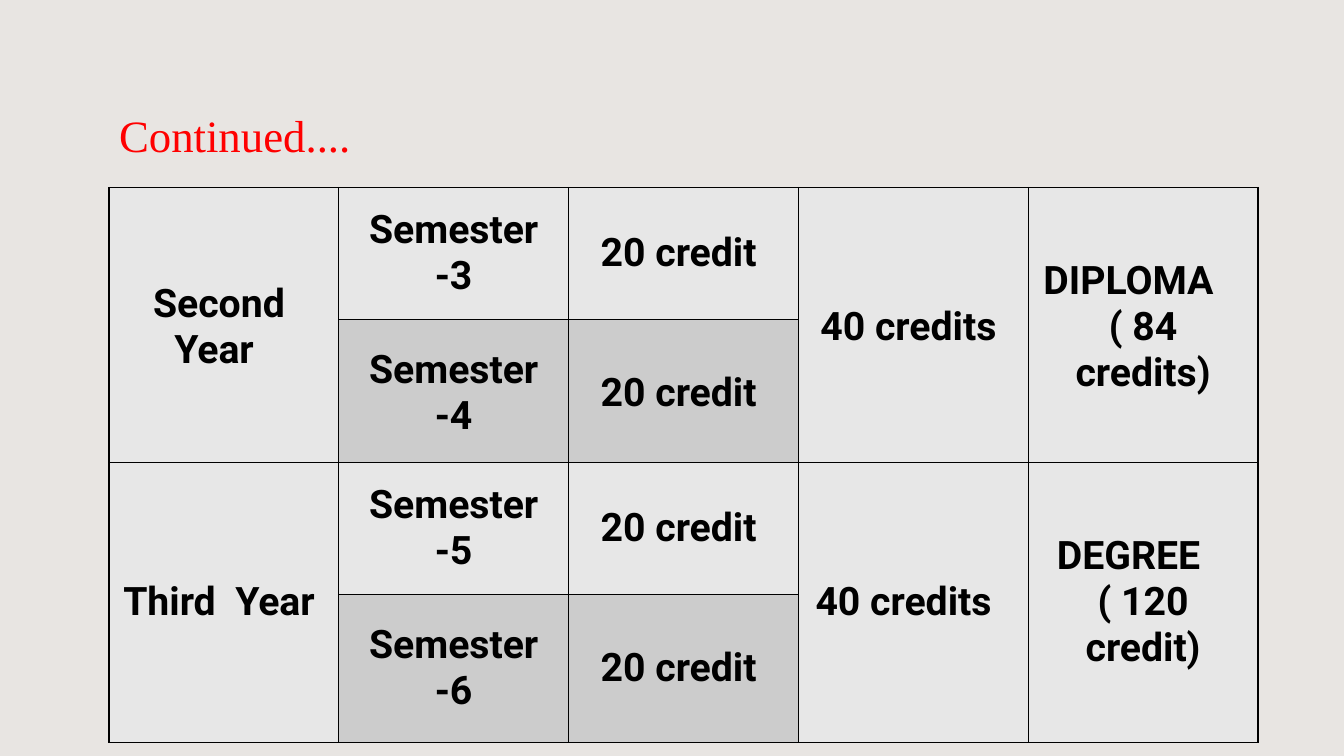
from dataclasses import dataclass

from lxml.etree import SubElement
from pptx import Presentation
from pptx.dml.color import RGBColor
from pptx.enum.text import MSO_ANCHOR, PP_ALIGN
from pptx.oxml.ns import qn
from pptx.util import Pt


@dataclass(frozen=True)
class Theme:
    back: str = "E8E5E2"
    light: str = "E7E7E7"
    dark: str = "CCCCCC"
    ink: str = "000000"
    red: str = "FF0000"
    head: int = 32
    body: int = 28
    serif: str = "Times New Roman"
    sans: str = "Roboto"


THEME = Theme()
HEAD = {"name": THEME.serif, "size": Pt(THEME.head), "bold": False}
BODY = {"name": THEME.sans, "size": Pt(THEME.body), "bold": True}

# Each year: name, semesters, credits per year, award
YEARS = [
    ("Second  Year  ", (3, 4), "40 credits ", "DIPLOMA   \n( 84 credits)"),
    ("Third  Year  ", (5, 6), "40 credits  ", "DEGREE   \n( 120 credit)"),
]
MERGED = (0, 3, 4)
COLS = 5


def paint(fill, color):
    fill.solid()
    fill.fore_color.rgb = RGBColor.from_string(color)


def style(frame, form, color, align):
    for para in frame.paragraphs:
        para.alignment = align
        for run in para.runs:
            for key, value in form.items():
                setattr(run.font, key, value)
            run.font.color.rgb = RGBColor.from_string(color)


def border(cell):
    props = cell._tc.get_or_add_tcPr()
    for spot, side in enumerate(("lnL", "lnR", "lnT", "lnB")):
        line = SubElement(props, qn(f"a:{side}"), w=str(Pt(1)))
        fill = SubElement(line, qn("a:solidFill"))
        SubElement(fill, qn("a:srgbClr"), val=THEME.ink)
        props.insert(spot, line)  # borders come before the fill


def title(slide, text, left, top, width, height):
    shape = slide.shapes.title
    box = {"left": left, "top": top, "width": width, "height": height}
    for key, value in box.items():
        setattr(shape, key, Pt(value))
    frame = shape.text_frame
    frame.text = text
    frame.vertical_anchor = MSO_ANCHOR.BOTTOM
    style(frame, HEAD, THEME.red, PP_ALIGN.LEFT)


def year(slide, data, left, top, width, height):
    name, terms, total, award = data
    rows = len(terms)
    table = slide.shapes.add_table(
        rows, COLS, Pt(left), Pt(top), Pt(width), Pt(height)).table
    table.first_row = table.horz_banding = False

    # Cells that span both semesters
    for col, text in zip(MERGED, (name, total, award)):
        table.cell(0, col).merge(table.cell(rows - 1, col))
        table.cell(0, col).text = text

    # One row per semester
    for row, term in enumerate(terms):
        table.cell(row, 1).text = f"Semester -{term}"
        table.cell(row, 2).text = "20 credit "
        for col in range(COLS):
            cell = table.cell(row, col)
            band = row % 2 and col not in MERGED
            paint(cell.fill, THEME.dark if band else THEME.light)
            border(cell)
            cell.vertical_anchor = MSO_ANCHOR.MIDDLE
            style(cell.text_frame, BODY, THEME.ink, PP_ALIGN.CENTER)


def main():
    deck = Presentation()
    deck.slide_width, deck.slide_height = Pt(960), Pt(540)
    slide = deck.slides.add_slide(deck.slide_layouts[5])
    paint(slide.background.fill, THEME.back)

    # Heading, then one table per year
    title(slide, "Continued....", 77.8, 31, 804.2, 87.8)
    for step, data in enumerate(YEARS):
        year(slide, data, 77.8, 133.9 + 196.6 * step, 820.8, 188.2)
    deck.save("out.pptx")


if __name__ == "__main__":
    main()
